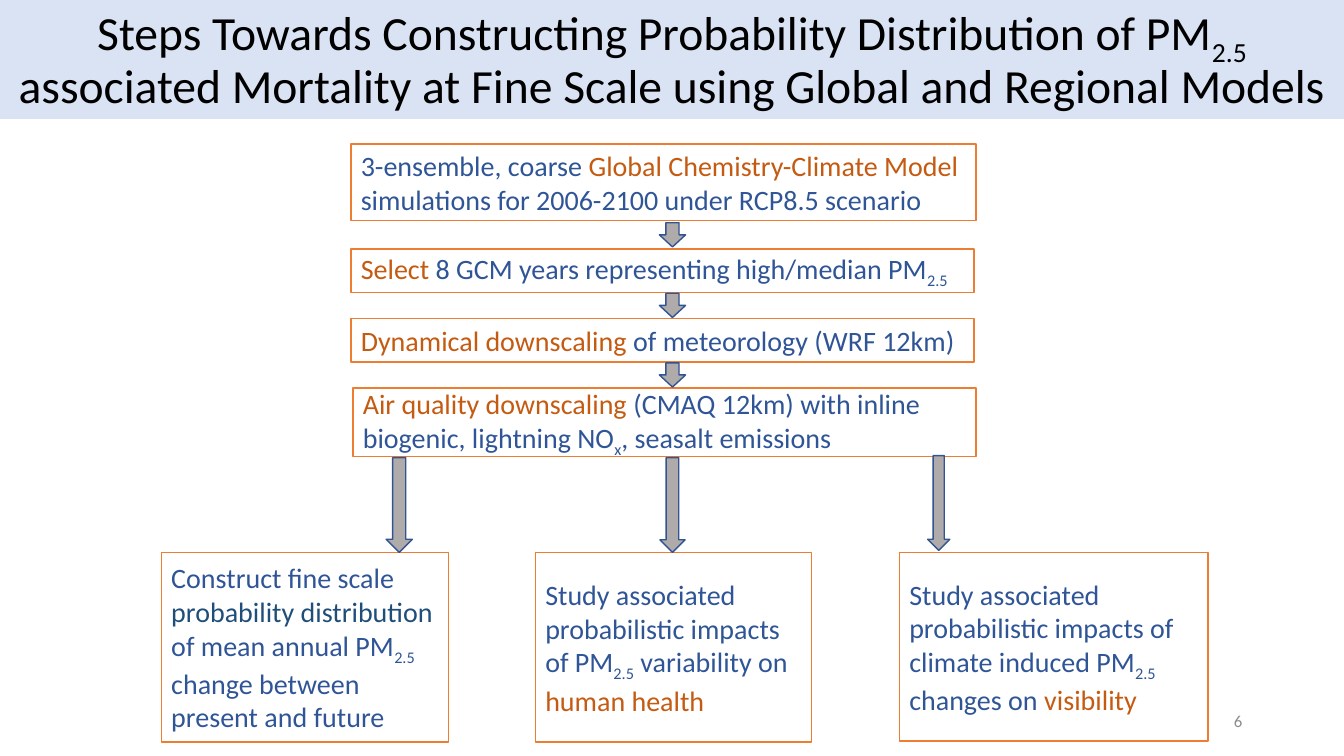
from pptx import Presentation
from pptx.dml.color import RGBColor
from pptx.enum.shapes import MSO_SHAPE
from pptx.enum.text import MSO_ANCHOR, MSO_AUTO_SIZE, PP_ALIGN
from pptx.util import Inches, Pt

PROCESS, DOWN_ARROW = MSO_SHAPE.FLOWCHART_PROCESS, MSO_SHAPE.DOWN_ARROW
MIDDLE, NO_AUTOFIT = MSO_ANCHOR.MIDDLE, MSO_AUTO_SIZE.NONE
LEFT, CENTER, RIGHT = PP_ALIGN.LEFT, PP_ALIGN.CENTER, PP_ALIGN.RIGHT

BLACK = RGBColor(0x00, 0x00, 0x00)
WHITE = RGBColor(0xFF, 0xFF, 0xFF)
GRAY = RGBColor(0x8C, 0x8C, 0x8C)
TITLE_FILL = RGBColor(0xDA, 0xE3, 0xF3)
BLUE = RGBColor(0x2F, 0x55, 0x97)
NAVY = RGBColor(0x1F, 0x4E, 0x79)
RUST = RGBColor(0xC5, 0x5A, 0x11)
ORANGE = RGBColor(0xED, 0x7D, 0x31)
ARROW_FILL = RGBColor(0xAF, 0xAB, 0xAB)
ARROW_LINE = RGBColor(0x32, 0x54, 0x91)

# Each run is (text, colour) or (text, colour, "sub")
TITLE = [
    ("Steps Towards Constructing Probability Distribution of PM", BLACK),
    ("2.5", BLACK, "sub"),
    (" associated Mortality at Fine Scale using Global and Regional Models", BLACK),
]
PAGE_NUMBER = [("6", GRAY)]

# (left, top, width, height), runs
STEPS = [
    ((3.48, 1.43, 6.2, 0.76), [
        ("3-ensemble, coarse ", BLUE),
        ("Global Chemistry-Climate Model ", RUST),
        ("simulations for 2006-2100 under RCP8.5 scenario", BLUE)]),
    ((3.48, 2.47, 6.18, 0.43), [
        ("Select", RUST),
        (" 8 GCM years representing high/median PM", BLUE),
        ("2.5", BLUE, "sub")]),
    ((3.48, 3.16, 6.18, 0.43), [
        ("Dynamical downscaling ", RUST),
        ("of meteorology (WRF 12km)", BLUE)]),
    ((3.5, 3.85, 6.18, 0.68), [
        ("Air quality downscaling ", RUST),
        ("(CMAQ 12km) with inline biogenic, lightning NO", BLUE),
        ("x", BLUE, "sub"),
        (", seasalt emissions", BLUE)]),
]
OUTCOMES = [
    ((1.6, 5.48, 2.85, 1.88), [
        ("Construct fine scale ", BLUE),
        ("probability distribution ", NAVY),
        ("of mean annual PM", BLUE),
        ("2.5 ", BLUE, "sub"),
        ("change between present and future", BLUE)]),
    ((5.31, 5.48, 2.74, 1.88), [
        ("Study associated probabilistic impacts of PM", BLUE),
        ("2.5", BLUE, "sub"),
        (" variability on ", BLUE),
        ("human health", RUST)]),
    ((8.92, 5.48, 3.06, 1.87), [
        ("Study associated probabilistic impacts of climate induced PM", BLUE),
        ("2.5", BLUE, "sub"),
        (" changes on ", BLUE),
        ("visibility", RUST)]),
]
FLOW_CENTER = 6.67
STEP_ARROW = (0.26, 0.24)
# (centre, top, width) of the arrows to the outcomes
BRANCH_ARROWS = [(3.96, 4.54, 0.26), (6.67, 4.54, 0.25), (9.31, 4.52, 0.22)]
BRANCH_HEIGHT = 0.94


def write(shape, runs, size, alignment=LEFT):
    frame = shape.text_frame
    frame.word_wrap = True
    frame.auto_size = NO_AUTOFIT
    frame.vertical_anchor = MIDDLE
    paragraph = frame.paragraphs[0]
    paragraph.alignment = alignment
    paragraph.font.name = "Calibri"
    paragraph.font.size = Pt(size)
    for text, color, *subscript in runs:
        run = paragraph.add_run()
        run.text = text
        run.font.color.rgb = color
        if subscript:
            run.font._element.set("baseline", "-25000")
    return paragraph


def add_shape(slide, kind, box, fill, line):
    shape = slide.shapes.add_shape(kind, *map(Inches, box))
    shape.shadow.inherit = False
    shape.fill.solid()
    shape.fill.fore_color.rgb = fill
    shape.line.color.rgb = line
    shape.line.width = Pt(1)
    return shape


def add_arrow(slide, center, top, width, height):
    box = (center - width / 2, top, width, height)
    add_shape(slide, DOWN_ARROW, box, ARROW_FILL, ARROW_LINE)


def add_title(slide):
    title = slide.shapes.title
    title.left, title.top = Inches(0), Inches(-0.01)
    title.width, title.height = Inches(13.33), Inches(1.19)
    title.fill.solid()
    title.fill.fore_color.rgb = TITLE_FILL
    write(title, TITLE, 34, CENTER).line_spacing = 0.9


def main():
    presentation = Presentation()
    presentation.slide_width = Inches(13.33)
    presentation.slide_height = Inches(7.5)
    slide = presentation.slides.add_slide(presentation.slide_layouts[5])

    add_title(slide)
    number = slide.shapes.add_textbox(*map(Inches, (9.42, 6.95, 3, 0.4)))
    write(number, PAGE_NUMBER, 12, RIGHT)

    for box, runs in STEPS + OUTCOMES:
        write(add_shape(slide, PROCESS, box, WHITE, ORANGE), runs, 20)

    arrow_width, arrow_height = STEP_ARROW
    for (upper, _), (lower, _) in zip(STEPS, STEPS[1:]):
        gap_middle = (upper[1] + upper[3] + lower[1]) / 2
        add_arrow(slide, FLOW_CENTER, gap_middle - arrow_height / 2,
                  arrow_width, arrow_height)
    for center, top, width in BRANCH_ARROWS:
        add_arrow(slide, center, top, width, BRANCH_HEIGHT)

    presentation.save("out.pptx")


if __name__ == "__main__":
    main()
